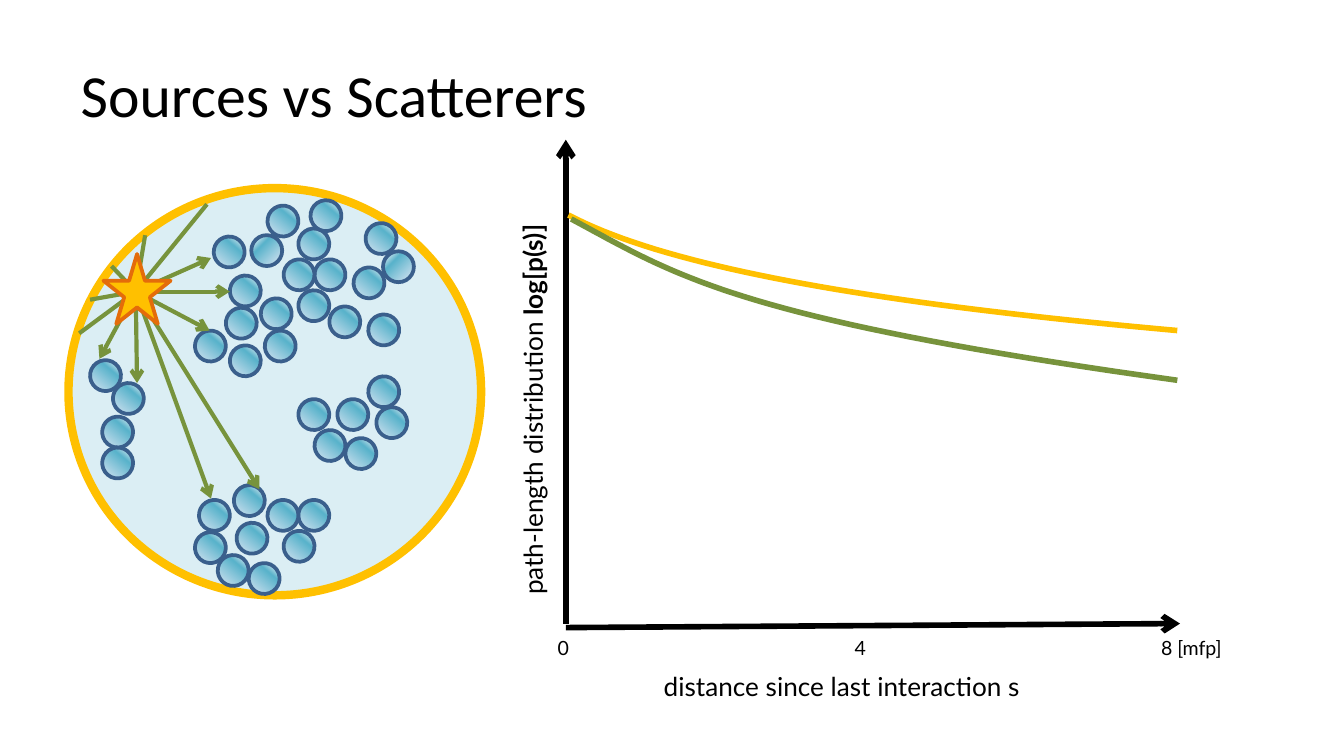
from lxml.etree import SubElement
from pptx import Presentation
from pptx.dml.color import RGBColor
from pptx.enum.shapes import MSO_CONNECTOR, MSO_SHAPE
from pptx.enum.text import MSO_ANCHOR, MSO_AUTO_SIZE, PP_ALIGN
from pptx.oxml import parse_xml
from pptx.oxml.ns import nsdecls, qn
from pptx.util import Inches, Pt

BLACK = RGBColor(0x00, 0x00, 0x00)
GOLD = RGBColor(0xFF, 0xC0, 0x00)
ORANGE = RGBColor(0xE4, 0x6C, 0x0A)
GREEN = RGBColor(0x77, 0x93, 0x3C)
PALE_BLUE = RGBColor(0xDB, 0xEE, 0xF4)
NAVY = RGBColor(0x3A, 0x5F, 0x8C)
WHITE = RGBColor(0xFF, 0xFF, 0xFF)
TEAL = RGBColor(0x59, 0xB3, 0xCB)
MIST = RGBColor(0xE1, 0xE8, 0xF5)

SPHERE_STOPS = [(0, WHITE), (6, WHITE), (34, TEAL), (100, MIST)]
SPHERE_SIZE = 0.23
SPHERE_TURN = 85

# Left and top of each scatterer, by cluster
TURNED_SPHERES = [
    # centre
    (1.68, 2.29), (1.97, 2.46), (1.45, 2.46), (1.71, 2.57), (1.94, 2.22), (1.71, 2.05),
    # top
    (1.99, 1.53), (1.59, 1.76), (2.22, 2.16), (2.34, 1.93), (2.22, 1.7), (2.11, 1.93),
    (2.45, 2.28), (2.31, 1.49), (2.74, 2.34), (2.63, 1.99), (2.72, 1.66),
    # left
    (0.67, 2.68), (0.76, 3.1), (0.76, 3.33), (0.84, 2.85),
    # bottom
    (2.11, 3.95), (2.22, 3.72), (1.74, 3.61), (1.99, 3.72), (1.76, 3.89),
    (1.45, 3.96), (1.62, 4.13), (1.85, 4.19), (1.48, 3.72),
    # right
    (2.51, 2.97), (2.34, 3.2), (2.22, 2.97), (2.74, 2.8), (2.57, 3.26), (2.8, 3.03),
]
UPRIGHT_SPHERES = [(1.87, 1.75), (2.85, 1.87)]

# Ends of the rays leaving the source
SOURCE = (1.01, 2.17)
RAYS_TO_SCATTERERS = [(1.02, 2.85), (1.57, 3.71), (1.93, 3.64), (1.56, 2.46),
                      (1.71, 2.17), (1.57, 1.92), (0.74, 2.67)]
RAYS_TO_BOUNDARY = [(1.54, 1.52), (1.08, 1.75), (0.83, 1.98), (0.67, 2.23), (0.59, 2.48)]


class SlideBuilder:
    title_font = "Calibri"
    label_font = "Lato"

    def __init__(self, page):
        self.page = page

    def title(self, text, left, top, width, height):
        box = self.page.shapes.title
        box.left, box.top = Inches(left), Inches(top)
        box.width, box.height = Inches(width), Inches(height)
        frame = box.text_frame
        frame.text = text
        frame.vertical_anchor = MSO_ANCHOR.MIDDLE
        para = frame.paragraphs[0]
        para.alignment = PP_ALIGN.LEFT
        self.format_span(para.runs[0], self.title_font, 32)

    def format_span(self, span, font, size):
        span.font.name = font
        span.font.size = Pt(size)
        span.font.color.rgb = BLACK

    def label(self, text, left, top, width, height, size, bold_text="", rotation=0):
        box = self.page.shapes.add_textbox(Inches(left), Inches(top), Inches(width), Inches(height))
        box.rotation = rotation
        frame = box.text_frame
        frame.text = text
        frame.word_wrap = False
        frame.auto_size = MSO_AUTO_SIZE.SHAPE_TO_FIT_TEXT
        para = frame.paragraphs[0]
        if bold_text:
            span = para.add_run()
            span.text = bold_text
            span.font.bold = True
        for span in para.runs:
            self.format_span(span, self.label_font, size)

    def line(self, start, end, color, width, arrow=True):
        connector = self.page.shapes.add_connector(
            MSO_CONNECTOR.STRAIGHT, *(Inches(value) for value in (*start, *end)))
        connector.line.color.rgb = color
        connector.line.width = Pt(width)
        if arrow:
            SubElement(connector.line._get_or_add_ln(), qn("a:tailEnd"), type="arrow")
        SubElement(connector._element.spPr, qn("a:effectLst"))

    def shape(self, kind, left, top, width, height, fill, outline, weight, rotation=0):
        shape = self.page.shapes.add_shape(
            kind, Inches(left), Inches(top), Inches(width), Inches(height))
        shape.shadow.inherit = False
        shape.rotation = rotation
        shape.fill.solid()
        shape.fill.fore_color.rgb = fill
        shape.line.color.rgb = outline
        shape.line.width = Pt(weight)
        return shape

    def sphere(self, left, top, rotation=0):
        shape = self.shape(MSO_SHAPE.OVAL, left, top, SPHERE_SIZE, SPHERE_SIZE,
                           TEAL, NAVY, 2, rotation)
        stops = "".join(f'<a:gs pos="{place * 1000}"><a:srgbClr val="{color}"/></a:gs>'
                        for place, color in SPHERE_STOPS)
        gradient = parse_xml(f'<a:gradFill {nsdecls("a")} rotWithShape="1"><a:gsLst>{stops}</a:gsLst>'
                             '<a:lin ang="2700000" scaled="0"/></a:gradFill>')
        properties = shape._element.spPr
        properties.replace(properties.find(qn("a:solidFill")), gradient)

    def curve(self, controls, color, steps=40):
        """Draw a cubic Bezier curve from its four control points."""
        points = []
        for step in range(steps + 1):
            t = step / steps
            weights = ((1 - t) ** 3, 3 * t * (1 - t) ** 2, 3 * t ** 2 * (1 - t), t ** 3)
            points.append(tuple(Inches(sum(w * point[axis] for w, point in zip(weights, controls)))
                                for axis in (0, 1)))
        builder = self.page.shapes.build_freeform(*points[0])
        builder.add_line_segments(points[1:], close=False)
        shape = builder.convert_to_shape()
        shape.shadow.inherit = False
        shape.fill.background()
        shape.line.color.rgb = color
        shape.line.width = Pt(3)


def main():
    deck = Presentation()
    deck.slide_width = Inches(10)
    deck.slide_height = Inches(10 * 9 / 16)
    slide = SlideBuilder(deck.slides.add_slide(deck.slide_layouts[5]))

    slide.title("Sources vs Scatterers", 0.5, 0.23, 9, 0.94)

    # Axes and their labels
    slide.line((4.21, 4.64), (4.21, 1.04), BLACK, 3)
    slide.line((4.21, 4.67), (8.78, 4.64), BLACK, 3)
    slide.label("path-length distribution ", 2.22, 2.61, 3.49, 0.34, 14,
                bold_text="log[p(s)]", rotation=270)
    slide.label("distance since last interaction s", 4.84, 4.94, 3.32, 0.34, 14)
    for text, left, width in [("0", 4.05, 0.31), ("4", 6.26, 0.31), ("8 [mfp]", 8.54, 0.79)]:
        slide.label(text, left, 4.68, width, 0.29, 10.5)

    # Medium with its scatterers
    slide.shape(MSO_SHAPE.OVAL, 0.51, 1.4, 3.07, 3.03, PALE_BLUE, GOLD, 4.5)
    for left, top in TURNED_SPHERES:
        slide.sphere(left, top, SPHERE_TURN)
    for left, top in UPRIGHT_SPHERES:
        slide.sphere(left, top)

    # Source and its rays
    for end in RAYS_TO_SCATTERERS:
        slide.line(SOURCE, end, GREEN, 2.25)
    for end in RAYS_TO_BOUNDARY:
        slide.line(SOURCE, end, GREEN, 2.25, arrow=False)
    slide.shape(MSO_SHAPE.STAR_5_POINT, 0.77, 1.89, 0.5, 0.52, GOLD, ORANGE, 2)

    # Path-length curves
    slide.curve([(4.23, 1.6), (5, 2.01), (6.63, 2.27), (8.76, 2.46)], GOLD)
    slide.curve([(4.25, 1.63), (5.02, 2.04), (5.44, 2.37), (8.76, 2.83)], GREEN)

    deck.save("out.pptx")


if __name__ == "__main__":
    main()
